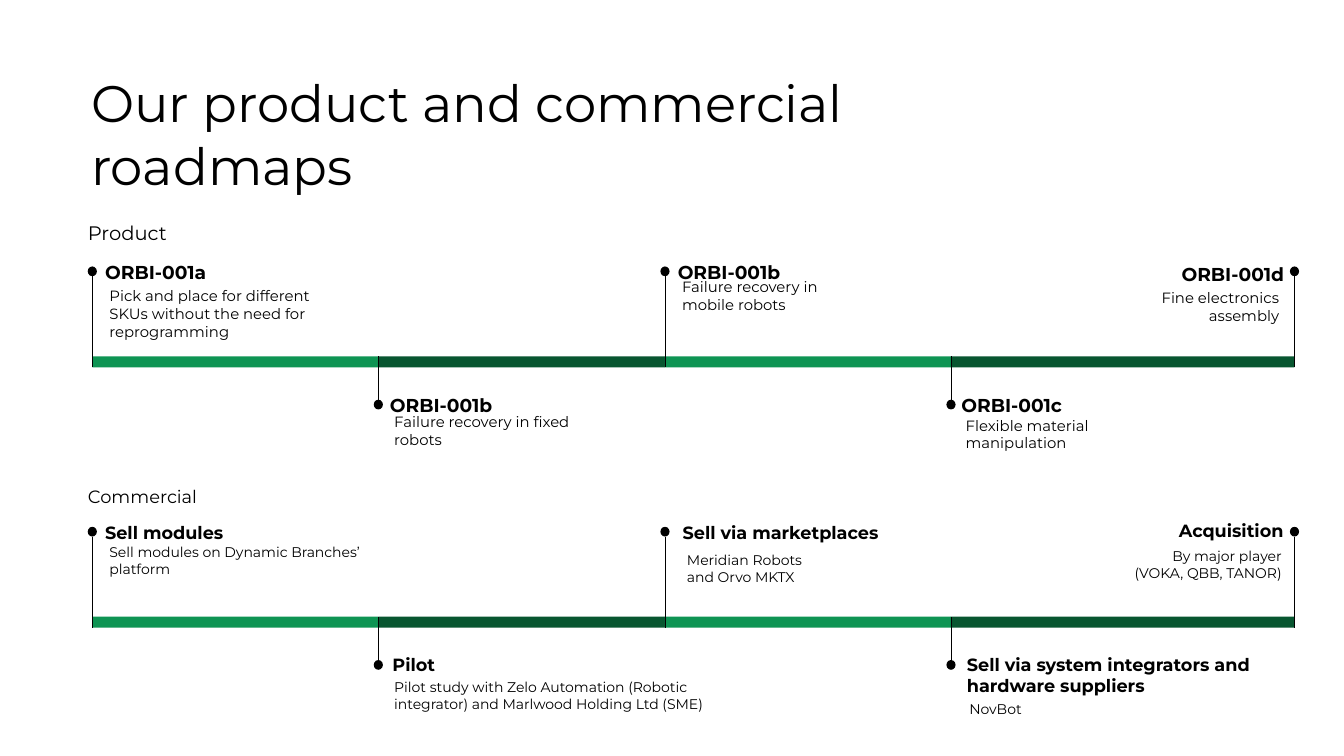
from lxml.etree import SubElement
from pptx import Presentation
from pptx.dml.color import RGBColor
from pptx.enum.shapes import MSO_CONNECTOR, MSO_SHAPE
from pptx.enum.text import PP_ALIGN
from pptx.oxml.ns import qn
from pptx.util import Inches, Pt

COLORS = {"ink": "000000", "light": "0E9453", "dark": "085630"}
FONT = "Montserrat"
STOPS = [1.51, 6.19, 10.88, 15.56, 21.18]
BAR_H = 0.18
DOT_W, DOT_H = 0.15, 0.16

FORMATS = {
    "title": {"size": 60.5, "bold": False, "spacing": 1.01, "insets": (0, 0.09)},
    "heading": {"bold": True, "spacing": 1.01, "insets": (0, 0.01)},
    "body": {"bold": False, "spacing": 1, "insets": (0.07, 0.07)},
    "label": {"bold": False, "spacing": 1, "insets": (0.1, 0.1)},
}

ROADMAPS = [
    {
        "label": ("Product", 1.34, 3.51, 2.11, 0.45),
        "bar": 5.83,
        "sizes": {"label": 23, "heading": 22, "body": 17.5},
        "milestones": [
            (("ORBI-001a", 1.72, 4.25, 4.13, 0.38),
             ("Pick and place for different SKUs without the need for reprogramming",
              1.72, 4.62, 3.53, 1.11)),
            (("ORBI-001b", 6.38, 6.43, 4.13, 0.38),
             ("Failure recovery in fixed robots", 6.38, 6.68, 3.53, 0.67)),
            (("ORBI-001b", 11.09, 4.25, 4.57, 0.38),
             ("Failure recovery in mobile robots", 11.09, 4.48, 3.07, 1.04)),
            (("ORBI-001c", 15.73, 6.43, 3.83, 0.38),
             ("Flexible material manipulation", 15.73, 6.74, 3.53, 0.81)),
            (("ORBI-001d", 17.67, 4.28, 3.34, 0.38),
             ("Fine electronics assembly", 18.15, 4.66, 2.85, 0.81)),
        ],
    },
    {
        "label": ("Commercial", 1.34, 7.84, 4.29, 0.45),
        "bar": 10.09,
        "sizes": {"label": 21, "heading": 20.8, "body": 16.5},
        "milestones": [
            (("Sell modules", 1.72, 8.53, 3.9, 0.36),
             ("Sell modules on Dynamic Branches’ platform", 1.72, 8.82, 4.83, 0.58)),
            (("Pilot", 6.42, 10.68, 3.9, 0.36),
             ("Pilot study with Zelo Automation (Robotic integrator) and Marlwood Holding Ltd (SME)",
              6.38, 11.03, 5.21, 0.76)),
            (("Sell via marketplaces", 11.17, 8.53, 5.61, 0.36),
             ("Meridian Robots\nand Orvo MKTX", 11.17, 8.95, 4.09, 0.81)),
            (("Sell via system integrators and hardware suppliers", 15.82, 10.68, 4.68, 0.71),
             ("NovBot", 15.79, 11.39, 3.34, 0.3)),
            (("Acquisition", 17.1, 8.5, 3.9, 0.36),
             ("By major player\n(VOKA, QBB, TANOR)", 16.75, 8.89, 4.29, 0.97)),
        ],
    },
]


def add_text(s, item, kind, size, align=PP_ALIGN.LEFT):
    """Add a text box in one of the named formats."""
    text, *box = item
    fmt = FORMATS[kind]
    side, edge = map(Inches, fmt["insets"])
    tf = s.shapes.add_textbox(*map(Inches, box)).text_frame
    frame = {"word_wrap": True, "margin_left": side, "margin_right": side,
             "margin_top": edge, "margin_bottom": edge}
    for name, value in frame.items():
        setattr(tf, name, value)
    tf.text = text
    for p in tf.paragraphs:
        p.alignment = align
        p.line_spacing = fmt["spacing"]
        for r in p.runs:
            for name, value in {"name": FONT, "size": Pt(size), "bold": fmt["bold"]}.items():
                setattr(r.font, name, value)
            r.font.color.rgb = RGBColor.from_string(COLORS["ink"])


def add_solid(shapes, preset, box, color):
    """Add a filled shape without outline or shadow."""
    sp = shapes.add_shape(preset, *map(Inches, box))
    sp.shadow.inherit = False
    sp.fill.solid()
    sp.fill.fore_color.rgb = RGBColor.from_string(COLORS[color])
    sp.line.fill.background()


def add_marker(s, x, bar, above):
    """Add a grouped stem and dot above or below the bar."""
    shapes = s.shapes.add_group_shape().shapes
    dot_top = bar - 1.47 if above else bar + 0.71
    start = dot_top + DOT_H if above else dot_top
    end = bar + BAR_H if above else bar
    stem = shapes.add_connector(MSO_CONNECTOR.STRAIGHT, *map(Inches, (x, start, x, end)))
    stem.line.width = Pt(0.75)
    stem.line.color.rgb = RGBColor.from_string(COLORS["ink"])
    SubElement(stem._element.spPr, qn("a:effectLst"))
    add_solid(shapes, MSO_SHAPE.OVAL, (x - DOT_W / 2, dot_top, DOT_W, DOT_H), "ink")


def add_roadmap(s, roadmap):
    """Add a label, a segmented bar and its milestones."""
    bar, sizes = roadmap["bar"], roadmap["sizes"]
    add_text(s, roadmap["label"], "label", sizes["label"])
    for i, (left, right) in enumerate(zip(STOPS, STOPS[1:])):
        add_solid(s.shapes, MSO_SHAPE.RECTANGLE, (left, bar, right - left, BAR_H),
                  ("light", "dark")[i % 2])
    for i, (x, (heading, body)) in enumerate(zip(STOPS, roadmap["milestones"])):
        align = PP_ALIGN.RIGHT if x == STOPS[-1] else PP_ALIGN.LEFT
        add_marker(s, x, bar, above=i % 2 == 0)
        add_text(s, heading, "heading", sizes["heading"], align)
        add_text(s, body, "body", sizes["body"], align)


def main():
    """Build the roadmap slide."""
    prs = Presentation()
    prs.slide_width, prs.slide_height = Inches(21.99), Inches(12.37)
    s = prs.slides.add_slide(prs.slide_layouts[6])
    add_text(s, ("Our product and commercial roadmaps", 1.49, 1.07, 13.57, 2.14),
             "title", FORMATS["title"]["size"])
    for roadmap in ROADMAPS:
        add_roadmap(s, roadmap)
    prs.save("out.pptx")


if __name__ == "__main__":
    main()
